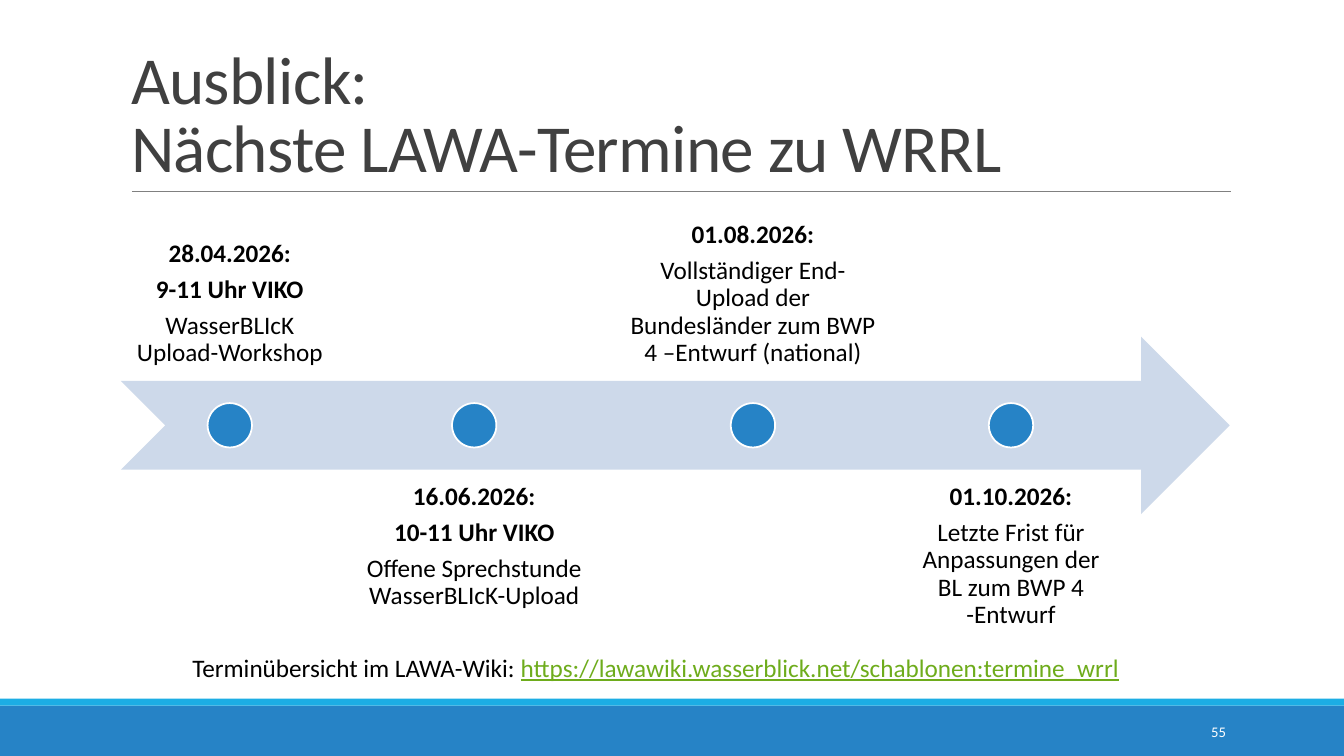
from lxml import etree
from pptx import Presentation
from pptx.dml.color import RGBColor
from pptx.enum.shapes import MSO_CONNECTOR, MSO_SHAPE
from pptx.enum.text import MSO_ANCHOR, MSO_AUTO_SIZE, PP_ALIGN
from pptx.oxml.ns import qn
from pptx.util import Pt

LEFT, CENTER, RIGHT = PP_ALIGN.LEFT, PP_ALIGN.CENTER, PP_ALIGN.RIGHT
TOP, MIDDLE, BOTTOM = MSO_ANCHOR.TOP, MSO_ANCHOR.MIDDLE, MSO_ANCHOR.BOTTOM
FIXED = MSO_AUTO_SIZE.NONE
RECT, OVAL, ARROW = MSO_SHAPE.RECTANGLE, MSO_SHAPE.OVAL, MSO_SHAPE.NOTCHED_RIGHT_ARROW
STRAIGHT = MSO_CONNECTOR.STRAIGHT

COLORS = {
    "blue": "2683C6", "cyan": "1CADE4", "pale": "CDD9EA", "gray": "808080",
    "title": "404040", "text": "000000", "white": "FFFFFF", "link": "6EAC1C",
}
WIDE, HIGH = 960, 540
EDGE, SPAN = 86.4, 792
AXIS, BAND = 303.8, 126.7
DOT, GAP = 31.7, 5.05
EVENTS = [
    (155.5, ["28.04.2026:", "9-11 Uhr VIKO"], "WasserBLIcK Upload-Workshop"),
    (183.6, ["16.06.2026:", "10-11 Uhr VIKO"], "Offene Sprechstunde WasserBLIcK-Upload"),
    (204.5, ["01.08.2026:"],
     "Vollständiger End-Upload der Bundesländer zum BWP 4 –Entwurf (national)"),
    (154.1, ["01.10.2026:"], "Letzte Frist für Anpassungen der BL zum BWP 4 -Entwurf"),
]


def color(name):
    return RGBColor.from_string(COLORS[name])


def assign(item, values):
    for key, value in values.items():
        setattr(item, key, value)


class Canvas:
    font = "Calibri"

    def __init__(self, slide):
        self.slide = slide

    def style(self, run, size, tint, **extra):
        assign(run.font, {"name": self.font, "size": Pt(size), **extra})
        run.font.color.rgb = color(tint)

    def title(self, text, box, size):
        shape = self.slide.shapes.title
        assign(shape, dict(zip(("left", "top", "width", "height"), map(Pt, box))))
        frame = shape.text_frame
        frame.text = text
        assign(frame, {"auto_size": FIXED, "word_wrap": True, "vertical_anchor": BOTTOM})
        para = frame.paragraphs[0]
        assign(para, {"alignment": LEFT, "line_spacing": 0.85})
        for run in para.runs:
            self.style(run, size, "title")
            run._r.get_or_add_rPr().set("spc", "-50")

    def shape(self, kind, box, fill, edge=None):
        shape = self.slide.shapes.add_shape(kind, *map(Pt, box))
        shape.shadow.inherit = False
        shape.fill.solid()
        shape.fill.fore_color.rgb = color(fill)
        if edge:
            shape.line.color.rgb = color(edge)
            shape.line.width = Pt(1.25)
        else:
            shape.line.fill.background()

    def line(self, start, end, tint, width):
        line = self.slide.shapes.add_connector(STRAIGHT, *map(Pt, start + end))
        line.line.color.rgb = color(tint)
        line.line.width = Pt(width)
        etree.SubElement(line._element.spPr, qn("a:effectLst"))

    def text(self, box, paras, size, inset=None, anchor=TOP, **form):
        frame = self.slide.shapes.add_textbox(*map(Pt, box)).text_frame
        assign(frame, {"word_wrap": True, "vertical_anchor": anchor})
        if inset:
            sides = ("left", "top", "right", "bottom")
            assign(frame, {f"margin_{side}": Pt(inset) for side in sides})
        for index, parts in enumerate(paras):
            para = frame.add_paragraph() if index else frame.paragraphs[0]
            assign(para, form)
            for words, tint, extra in parts:
                run = para.add_run()
                run.text = words
                self.style(run, size, tint, **extra)


def draw(canvas):
    canvas.shape(RECT, (0, 504, WIDE, 36), "blue")
    canvas.shape(RECT, (0, 499, WIDE, 5), "cyan")
    canvas.line((94.3, 136.8), (879, 136.8), "gray", 0.5)
    canvas.title("Ausblick:\vNächste LAWA-Termine zu WRRL", (EDGE, 22.3, SPAN, 114.5), 48)
    canvas.shape(ARROW, (EDGE, AXIS - BAND / 2, SPAN, BAND), "pale")
    left = EDGE
    for index, (width, heads, note) in enumerate(EVENTS):
        below = index % 2
        top = AXIS + BAND / 4 if below else AXIS - BAND * 5 / 4
        paras = [[(head, "text", {"bold": True})] for head in heads]
        paras.append([(note, "text", {"bold": False})])
        canvas.text((left, top, width, BAND), paras, 18, 10.08, TOP if below else BOTTOM,
                    alignment=CENTER, line_spacing=0.9, space_after=Pt(6.3))
        canvas.shape(OVAL, (left + (width - DOT) / 2, AXIS - DOT / 2, DOT, DOT),
                     "blue", "white")
        left += width + GAP
    canvas.text((779.8, 508.3, 103, 28.8), [[("55", "white", {})]], 10.5,
                anchor=MIDDLE, alignment=RIGHT)
    canvas.text((130.3, 462.2, 688.3, 29), [[
        ("Terminübersicht im LAWA-Wiki: ", "text", {}),
        ("https://lawawiki.wasserblick.net/schablonen:termine_wrrl", "link",
         {"underline": True}),
    ]], 18)


def main():
    deck = Presentation()
    assign(deck, {"slide_width": Pt(WIDE), "slide_height": Pt(HIGH)})
    draw(Canvas(deck.slides.add_slide(deck.slide_layouts[5])))
    deck.save("out.pptx")


if __name__ == "__main__":
    main()
